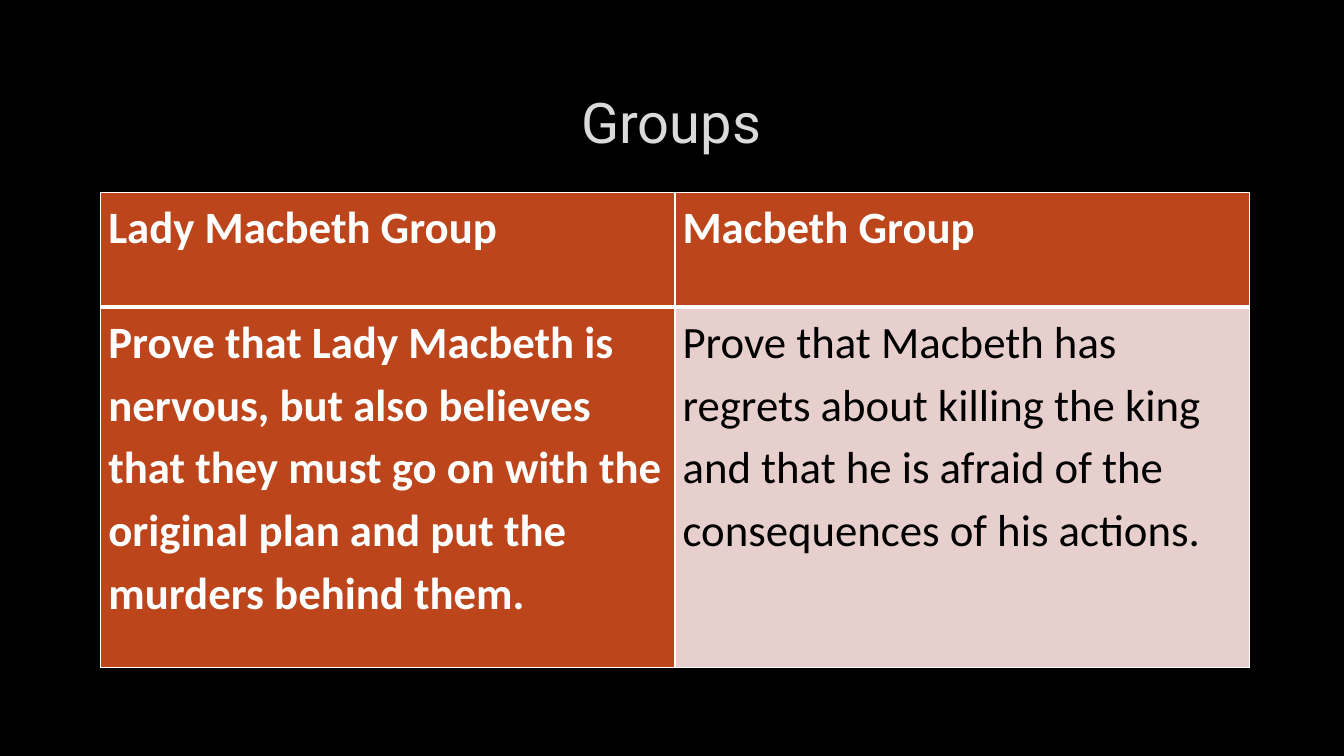
from lxml import etree
from pptx import Presentation
from pptx.dml.color import RGBColor
from pptx.enum import text
from pptx.oxml import ns
from pptx.util import Pt

BLACK = RGBColor(0x00, 0x00, 0x00)
WHITE = RGBColor(0xFF, 0xFF, 0xFF)
GREY = RGBColor(0xDA, 0xDA, 0xDA)
RUST = RGBColor(0xBC, 0x45, 0x1B)
PINK = RGBColor(0xE7, 0xCF, 0xCD)

# Content
TITLE = "Groups"
ROWS = [
    ("Lady Macbeth Group", "Macbeth Group"),
    ("Prove that Lady Macbeth is nervous, but also believes that they must "
     "go on with the original plan and put the murders behind them.",
     "Prove that Macbeth has regrets about killing the king and that he is "
     "afraid of the consequences of his actions."),
]
LEFT, TOP = 72, 137.5
COL_WIDTH = 410.2
HEIGHTS = (82, 257.5)


def set_edge(cell, side, width):
    """Draw one white border; sides must come in the order L, R, T, B."""
    line = etree.SubElement(cell._tc.get_or_add_tcPr(), ns.qn(f"a:ln{side}"),
                            w=str(Pt(width)))
    fill = etree.SubElement(line, ns.qn("a:solidFill"))
    etree.SubElement(fill, ns.qn("a:srgbClr"), val=str(WHITE))


def style_cell(cell, words, row, col):
    plain = row > 0 and col > 0
    # Borders, with a thick rule under the header
    for side in "LRTB":
        rule = (row, side) in ((0, "B"), (1, "T"))
        set_edge(cell, side, 3 if rule else 1)
    cell.fill.solid()
    cell.fill.fore_color.rgb = PINK if plain else RUST
    cell.margin_left = cell.margin_right = Pt(5.4)
    cell.margin_top = cell.margin_bottom = 0
    # Text
    cell.text = words
    par = cell.text_frame.paragraphs[0]
    par.line_spacing = 1.15
    par.font.name = "Calibri"
    par.font.size = Pt(32)
    par.font.bold = not plain
    par.font.color.rgb = BLACK if plain else WHITE


# Slide
deck = Presentation()
deck.slide_width, deck.slide_height = Pt(960), Pt(540)
slide = deck.slides.add_slide(deck.slide_layouts[5])
slide.background.fill.solid()
slide.background.fill.fore_color.rgb = BLACK

# Title
title = slide.shapes.title
title.left, title.top, title.width, title.height = map(
    Pt, (72, 48.25, 815, 76.3))
title.text = TITLE
title.text_frame.vertical_anchor = text.MSO_ANCHOR.MIDDLE
head = title.text_frame.paragraphs[0]
head.alignment = text.PP_ALIGN.CENTER
head.font.name = "Roboto"
head.font.size = Pt(40)
head.font.color.rgb = GREY

# Table
cols = len(ROWS[0])
table = slide.shapes.add_table(
    len(ROWS), cols, Pt(LEFT), Pt(TOP),
    Pt(COL_WIDTH * cols), Pt(sum(HEIGHTS))).table
for column in table.columns:
    column.width = Pt(COL_WIDTH)
for row, (height, texts) in enumerate(zip(HEIGHTS, ROWS)):
    table.rows[row].height = Pt(height)
    for col, words in enumerate(texts):
        style_cell(table.cell(row, col), words, row, col)

deck.save("out.pptx")
